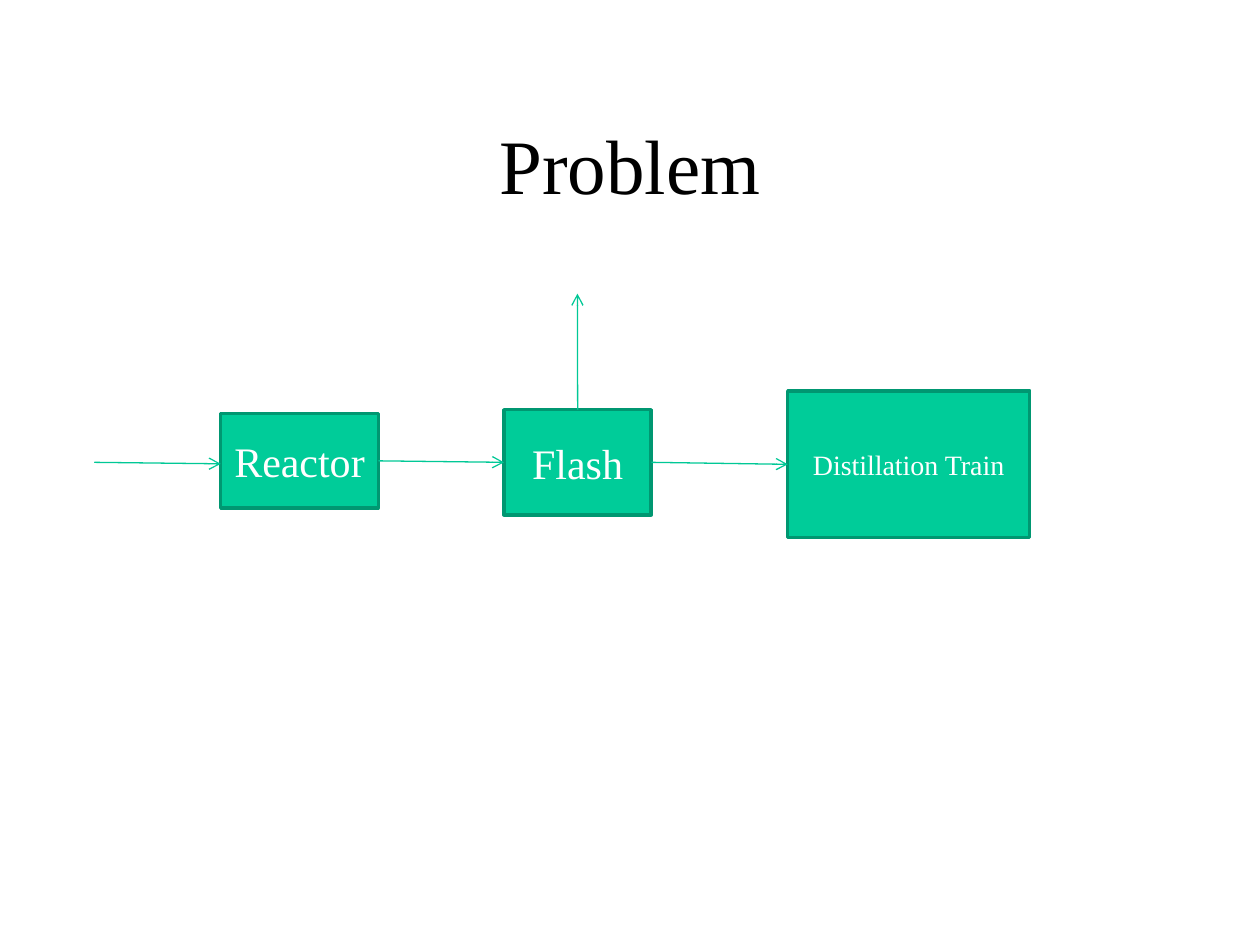
import pptx
import pptx.util
import pptx.dml.color
import pptx.enum.shapes
import pptx.enum.text
import pptx.oxml.ns
import lxml.etree

Cm, Pt = pptx.util.Cm, pptx.util.Pt
COLORS = {"title": "000000", "box": "00CC99", "border": "009771",
          "label": "FFFFFF", "stream": "00C896"}
TOP, LEFT, RIGHT = 0, 1, 3


def rgb(name):
    return pptx.dml.color.RGBColor.from_string(COLORS[name])


class FlowSlide:
    """Style and drawing methods for one process flow slide."""
    font = "Times New Roman"

    def __init__(self, prs):
        self.s = prs.slides.add_slide(prs.slide_layouts[5])

    def set_text(self, tf, text, size, color):
        tf.word_wrap = True
        tf.vertical_anchor = pptx.enum.text.MSO_ANCHOR.MIDDLE
        p = tf.paragraphs[0]
        p.alignment = pptx.enum.text.PP_ALIGN.CENTER
        r = p.add_run()
        r.text = text
        r.font.name, r.font.size = self.font, Pt(size)
        r.font.color.rgb = rgb(color)

    def title(self, text, x, y, w, h):
        sp = self.s.shapes.title
        sp.left, sp.top, sp.width, sp.height = Cm(x), Cm(y), Cm(w), Cm(h)
        self.set_text(sp.text_frame, text, 44, "title")

    def box(self, text, x, y, w, h, size=24):
        sp = self.s.shapes.add_shape(pptx.enum.shapes.MSO_SHAPE.RECTANGLE,
                                     Cm(x), Cm(y), Cm(w), Cm(h))
        sp.shadow.inherit = False
        sp.fill.solid()
        sp.fill.fore_color.rgb = rgb("box")
        sp.line.color.rgb = rgb("border")
        sp.line.width = Pt(2)
        tf = sp.text_frame
        tf.margin_left = tf.margin_right = Cm(0.1)
        self.set_text(tf, text, size, "label")
        return sp

    def arrow(self, start=(0, 0), end=(0, 0), source=None, target=None):
        """Draw a stream; source and target are (box, side) pairs to join."""
        c = self.s.shapes.add_connector(
            pptx.enum.shapes.MSO_CONNECTOR.STRAIGHT,
            *(Cm(v) for v in (*start, *end)))
        if source:
            c.begin_connect(*source)
        if target:
            c.end_connect(*target)
        c.line.color.rgb = rgb("stream")
        c.line.width = Pt(0.75)
        qn = pptx.oxml.ns.qn
        props = c.element.spPr
        lxml.etree.SubElement(props.find(qn("a:ln")), qn("a:tailEnd"), type="arrow")
        lxml.etree.SubElement(props, qn("a:effectLst"))


def main():
    prs = pptx.Presentation()
    prs.slide_width, prs.slide_height = Cm(25.4), Cm(19.05)
    flow = FlowSlide(prs)
    flow.title("Problem", 1.9, 1.7, 21.6, 3.18)

    reactor = flow.box("Reactor", 4.45, 8.34, 3.18, 1.9)
    flash = flow.box("Flash", 10.16, 8.26, 2.97, 2.12)
    train = flow.box("Distillation Train", 15.88, 7.88, 4.88, 2.96, size=16)

    flow.arrow(source=(reactor, RIGHT), target=(flash, LEFT))
    flow.arrow(source=(flash, RIGHT), target=(train, LEFT))
    flow.arrow(end=(11.64, 5.92), source=(flash, TOP))
    flow.arrow(start=(1.9, 9.32), end=(4.45, 9.35))

    prs.save("out.pptx")


if __name__ == "__main__":
    main()
